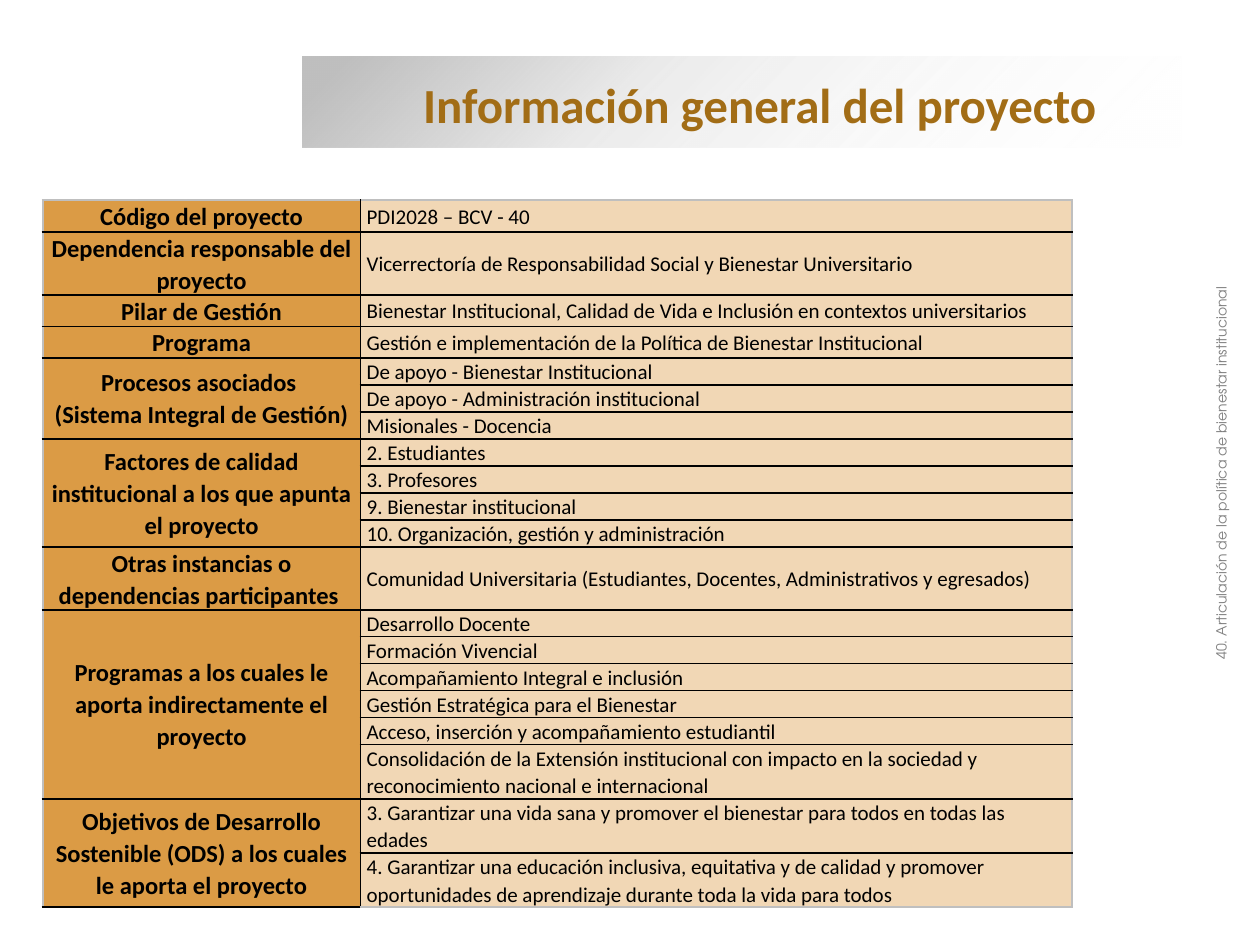
from lxml import etree
from pptx import Presentation
from pptx.dml.color import RGBColor
from pptx.enum.shapes import MSO_SHAPE
from pptx.enum.text import MSO_ANCHOR, MSO_AUTO_SIZE, PP_ALIGN
from pptx.oxml.ns import qn
from pptx.util import Inches, Pt

RECTANGLE = MSO_SHAPE.RECTANGLE
MIDDLE, TOP = MSO_ANCHOR.MIDDLE, MSO_ANCHOR.TOP
FIT_SHAPE = MSO_AUTO_SIZE.SHAPE_TO_FIT_TEXT
LEFT, CENTER, JUSTIFY = PP_ALIGN.LEFT, PP_ALIGN.CENTER, PP_ALIGN.JUSTIFY

COLORS = {
    "title": "A26D16",
    "side": "808080",
    "text": "000000",
    "label": "DB9B45",
    "value": "F1D7B5",
    "grid": "000000",
    "frame": "BFBFBF",
    "band": "BFBFBF",
    "white": "FFFFFF",
}
SHORT, LINE, WRAPPED, TALL = 0.21, 0.25, 0.43, 0.5
COLUMN_WIDTHS = (2.52, 5.65)
SECTIONS = [
    ("Código del proyecto", LEFT, [("PDI2028 – BCV - 40", LINE)]),
    ("Dependencia responsable del proyecto", LEFT, [
        ("Vicerrectoría de Responsabilidad Social y Bienestar Universitario", TALL)]),
    ("Pilar de Gestión", LEFT, [
        ("Bienestar Institucional, Calidad de Vida e Inclusión en contextos universitarios", LINE)]),
    ("Programa", JUSTIFY, [
        ("Gestión e implementación de la Política de Bienestar Institucional", LINE)]),
    ("Procesos asociados \n(Sistema Integral de Gestión)", LEFT, [
        ("De apoyo - Bienestar Institucional", SHORT),
        ("De apoyo - Administración institucional", SHORT),
        ("Misionales - Docencia", SHORT)]),
    ("Factores de calidad institucional a los que apunta el proyecto", LEFT, [
        ("2. Estudiantes", SHORT),
        ("3. Profesores", SHORT),
        ("9. Bienestar institucional", SHORT),
        ("10. Organización, gestión y administración", SHORT)]),
    ("Otras instancias o dependencias participantes ", JUSTIFY, [
        ("Comunidad Universitaria (Estudiantes, Docentes, Administrativos y egresados)", TALL)]),
    ("Programas a los cuales le aporta indirectamente el proyecto", LEFT, [
        ("Desarrollo Docente", SHORT),
        ("Formación Vivencial", SHORT),
        ("Acompañamiento Integral e inclusión", SHORT),
        ("Gestión Estratégica para el Bienestar", SHORT),
        ("Acceso, inserción y acompañamiento estudiantil", SHORT),
        ("Consolidación de la Extensión institucional con impacto en la sociedad y "
         "reconocimiento nacional e internacional", WRAPPED)]),
    ("Objetivos de Desarrollo Sostenible (ODS) a los cuales le aporta el proyecto", LEFT, [
        ("3. Garantizar una vida sana y promover el bienestar para todos en todas las edades", WRAPPED),
        ("4. Garantizar una educación inclusiva, equitativa y de calidad y promover "
         "oportunidades de aprendizaje durante toda la vida para todos", WRAPPED)]),
]


def write_text(text_frame, text, size, color="text", font="Calibri", bold=False,
               align=LEFT, spacing=None):
    paragraph = text_frame.paragraphs[0]
    paragraph.alignment = align
    paragraph.line_spacing = spacing
    for index, line in enumerate(text.split("\n")):
        if index:
            paragraph.add_line_break()
        run = paragraph.add_run()
        run.text = line
        run.font.name = font
        run.font.size = Pt(size)
        run.font.bold = bold
        run.font.color.rgb = RGBColor.from_string(COLORS[color])


def add_color(parent, color, opacity=100):
    element = etree.SubElement(parent, qn("a:srgbClr"), val=COLORS[color])
    if opacity < 100:
        etree.SubElement(element, qn("a:alpha"), val=str(opacity * 1000))


def add_gradient_band(shapes, left, top, width, height, stops, angle):
    band = shapes.add_shape(RECTANGLE, Inches(left), Inches(top), Inches(width), Inches(height))
    band.shadow.inherit = False
    band.line.fill.background()
    band.fill.gradient()
    band.fill.gradient_angle = -angle % 360
    stop_list = band.element.spPr.find(qn("a:gradFill")).find(qn("a:gsLst"))
    for stop in list(stop_list):
        stop_list.remove(stop)
    for position, color, opacity in stops:
        stop = etree.SubElement(stop_list, qn("a:gs"), pos=str(position * 1000))
        add_color(stop, color, opacity)


def add_text_box(shapes, left, top, width, height, text, anchor=TOP, rotation=0, **text_format):
    box = shapes.add_textbox(Inches(left), Inches(top), Inches(width), Inches(height))
    box.rotation = rotation
    text_frame = box.text_frame
    text_frame.word_wrap = True
    text_frame.auto_size = FIT_SHAPE
    text_frame.vertical_anchor = anchor
    write_text(text_frame, text, **text_format)


def set_borders(cell, outer_sides):
    properties = cell._tc.get_or_add_tcPr()
    for side in "LRTB":
        outer = side in outer_sides
        width = Pt(1.5 if outer else 1)
        line = etree.SubElement(properties, qn(f"a:ln{side}"), w=str(width))
        add_color(etree.SubElement(line, qn("a:solidFill")), "frame" if outer else "grid")


def style_cell(cell, fill, margin, outer_sides):
    set_borders(cell, outer_sides)
    cell.fill.solid()
    cell.fill.fore_color.rgb = RGBColor.from_string(COLORS[fill])
    cell.vertical_anchor = MIDDLE
    cell.margin_left = cell.margin_right = Inches(margin)
    cell.margin_top = cell.margin_bottom = 0


def add_project_table(shapes, left, top):
    rows = [(value, height, align) for _, align, values in SECTIONS for value, height in values]
    total_height = sum(height for _, height, _ in rows)
    table = shapes.add_table(len(rows), 2, Inches(left), Inches(top),
                             Inches(sum(COLUMN_WIDTHS)), Inches(total_height)).table
    table.first_row = table.horz_banding = False
    for column, width in zip(table.columns, COLUMN_WIDTHS):
        column.width = Inches(width)
    for index, (value, height, align) in enumerate(rows):
        table.rows[index].height = Inches(height)
        edges = ("T" if index == 0 else "") + ("B" if index == len(rows) - 1 else "")
        style_cell(table.cell(index, 0), "label", 0.04, "L" + edges)
        value_cell = table.cell(index, 1)
        style_cell(value_cell, "value", 0.05, "R" + edges)
        write_text(value_cell.text_frame, value, size=12, align=align, spacing=1.07)
    first = 0
    for label, _, values in SECTIONS:
        last = first + len(values) - 1
        label_cell = table.cell(first, 0)
        if last > first:
            label_cell.merge(table.cell(last, 0))
        write_text(label_cell.text_frame, label, size=14, bold=True, align=CENTER, spacing=1.07)
        first = last + 1


def main():
    presentation = Presentation()
    presentation.slide_width = Inches(10)
    presentation.slide_height = Inches(7.5)
    slide = presentation.slides.add_slide(presentation.slide_layouts[6])

    header = slide.shapes.add_group_shape()
    add_gradient_band(header.shapes, 2.4, 0.45, 6.98, 0.72, angle=45,
                      stops=[(5, "band", 100), (37, "band", 31), (100, "white", 0)])
    add_text_box(header.shapes, 3.26, 0.54, 6.2, 0.57, "Información general del proyecto",
                 anchor=MIDDLE, size=28, color="title", bold=True)
    add_text_box(slide.shapes, 7.34, 3.57, 4.84, 0.37,
                 "40. Articulación de la política de bienestar institucional",
                 rotation=270, size=8, color="side", font="TeX Gyre Adventor", align=CENTER)
    add_project_table(slide.shapes, 0.34, 1.59)
    presentation.save("out.pptx")


if __name__ == "__main__":
    main()
